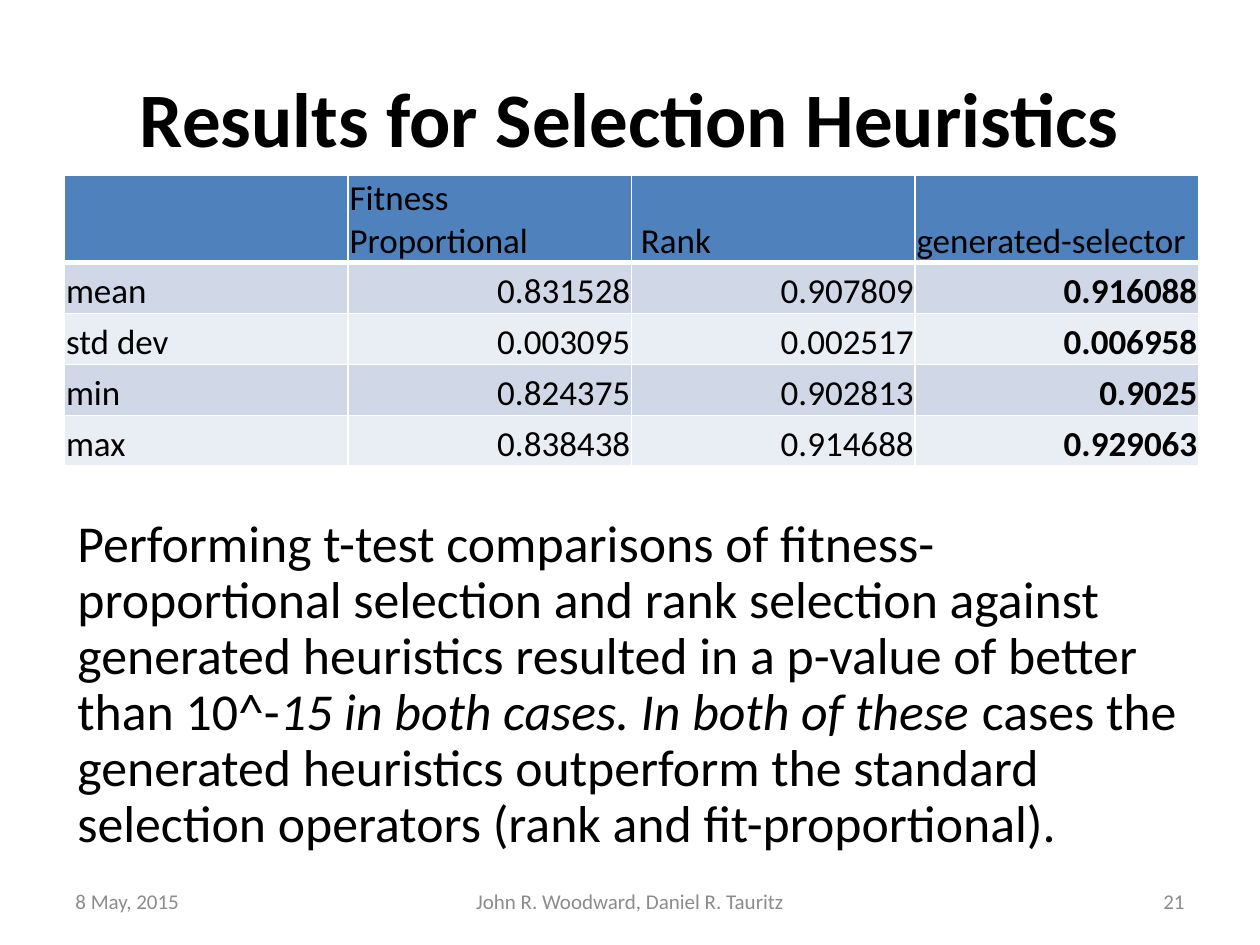
from lxml import etree
from pptx import Presentation
from pptx.dml.color import RGBColor
from pptx.enum.text import MSO_ANCHOR, MSO_AUTO_SIZE, PP_ALIGN
from pptx.oxml.ns import qn
from pptx.util import Pt

LEFT, CENTER, RIGHT = PP_ALIGN.LEFT, PP_ALIGN.CENTER, PP_ALIGN.RIGHT
MIDDLE, BOTTOM = MSO_ANCHOR.MIDDLE, MSO_ANCHOR.BOTTOM
NO_AUTOFIT = MSO_AUTO_SIZE.NONE

FONT = "Calibri"
BLACK = RGBColor(0x00, 0x00, 0x00)
WHITE = RGBColor(0xFF, 0xFF, 0xFF)
GREY = RGBColor(0x8C, 0x8C, 0x8C)
HEADER_BLUE = RGBColor(0x4F, 0x81, 0xBD)
BANDS = (RGBColor(0xD0, 0xD8, 0xE8), RGBColor(0xE9, 0xED, 0xF4))

RESULTS = [
    ["", "Fitness Proportional", " Rank", "generated-selector"],
    ["mean", "0.831528", "0.907809", "0.916088"],
    ["std dev", "0.003095", "0.002517", "0.006958"],
    ["min", "0.824375", "0.902813", "0.9025"],
    ["max", "0.838438", "0.914688", "0.929063"],
]
CONCLUSION = [
    ("Performing t-test comparisons of fitness-proportional selection and rank "
     "selection against generated heuristics resulted in a p-value of better "
     "than 10^-", False),
    ("15 in both cases. In both of these ", True),
    ("cases the generated heuristics outperform the standard selection "
     "operators (rank and fit-proportional).", False),
]


def add_text(paragraph, text, size, color=BLACK, bold=False, italic=False, align=LEFT):
    paragraph.alignment = align
    run = paragraph.add_run()
    run.text = text
    font = run.font
    font.name, font.size, font.bold, font.italic = FONT, Pt(size), bold, italic
    font.color.rgb = color


def place(shape, box):
    shape.left, shape.top, shape.width, shape.height = map(Pt, box)


def add_title(slide, box):
    title = slide.shapes.title
    place(title, box)
    frame = title.text_frame
    frame.auto_size = NO_AUTOFIT
    frame.vertical_anchor = MIDDLE
    add_text(frame.paragraphs[0], "Results for Selection Heuristics", 44,
             bold=True, align=CENTER)


def set_border(cell, side, width):
    line = etree.SubElement(cell._tc.get_or_add_tcPr(), qn(f"a:ln{side}"), w=str(Pt(width)))
    fill = etree.SubElement(line, qn("a:solidFill"))
    etree.SubElement(fill, qn("a:srgbClr"), val=str(WHITE))


def add_results_table(slide, box, header_height):
    row_count, column_count = len(RESULTS), len(RESULTS[0])
    left, top, width, height = box
    table = slide.shapes.add_table(row_count, column_count, *map(Pt, box)).table
    for column in table.columns:
        column.width = Pt(width / column_count)
    for r, values in enumerate(RESULTS):
        is_header = r == 0
        table.rows[r].height = Pt(
            header_height if is_header else (height - header_height) / (row_count - 1))
        for c, value in enumerate(values):
            cell = table.cell(r, c)
            cell.margin_left = cell.margin_right = cell.margin_top = Pt(0.75)
            cell.margin_bottom = Pt(0)
            cell.vertical_anchor = BOTTOM
            # Borders come before the fill in the cell properties
            for side in "LRTB":
                under_header = (r, side) in ((0, "B"), (1, "T"))
                set_border(cell, side, 3 if under_header else 1)
            cell.fill.solid()
            cell.fill.fore_color.rgb = HEADER_BLUE if is_header else BANDS[(r - 1) % 2]
            add_text(cell.text_frame.paragraphs[0], value, 20,
                     bold=not is_header and c == column_count - 1,
                     align=LEFT if is_header or c == 0 else RIGHT)


def add_conclusion(slide, box):
    body = slide.placeholders[1]
    place(body, box)
    frame = body.text_frame
    frame.auto_size = NO_AUTOFIT
    paragraph = frame.paragraphs[0]
    paragraph.line_spacing = 0.9
    # No bullet and no hanging indent
    properties = paragraph._p.get_or_add_pPr()
    properties.set("marL", "0")
    properties.set("indent", "0")
    etree.SubElement(properties, qn("a:buNone"))
    for text, italic in CONCLUSION:
        add_text(paragraph, text, 29.6, italic=italic)


def add_footer(slide, box):
    left, top, width, height = box
    side_width, center_width = 168, 228
    parts = [
        ("8 May, 2015", left, side_width, LEFT),
        ("John R. Woodward, Daniel R. Tauritz",
         left + (width - center_width) / 2, center_width, CENTER),
        ("21", left + width - side_width, side_width, RIGHT),
    ]
    for text, x, part_width, align in parts:
        frame = slide.shapes.add_textbox(Pt(x), Pt(top), Pt(part_width), Pt(height)).text_frame
        frame.word_wrap = True
        frame.vertical_anchor = MIDDLE
        add_text(frame.paragraphs[0], text, 12, color=GREY, align=align)


def main():
    presentation = Presentation()
    presentation.slide_width, presentation.slide_height = Pt(720), Pt(540)
    slide = presentation.slides.add_slide(presentation.slide_layouts[1])
    add_title(slide, (36, 21.6, 648, 90))
    add_results_table(slide, (37, 100.3, 648, 165.8), header_height=49.4)
    add_conclusion(slide, (37, 292.3, 648, 206.6))
    add_footer(slide, (36, 500.5, 648, 28.8))
    presentation.save("out.pptx")


if __name__ == "__main__":
    main()
